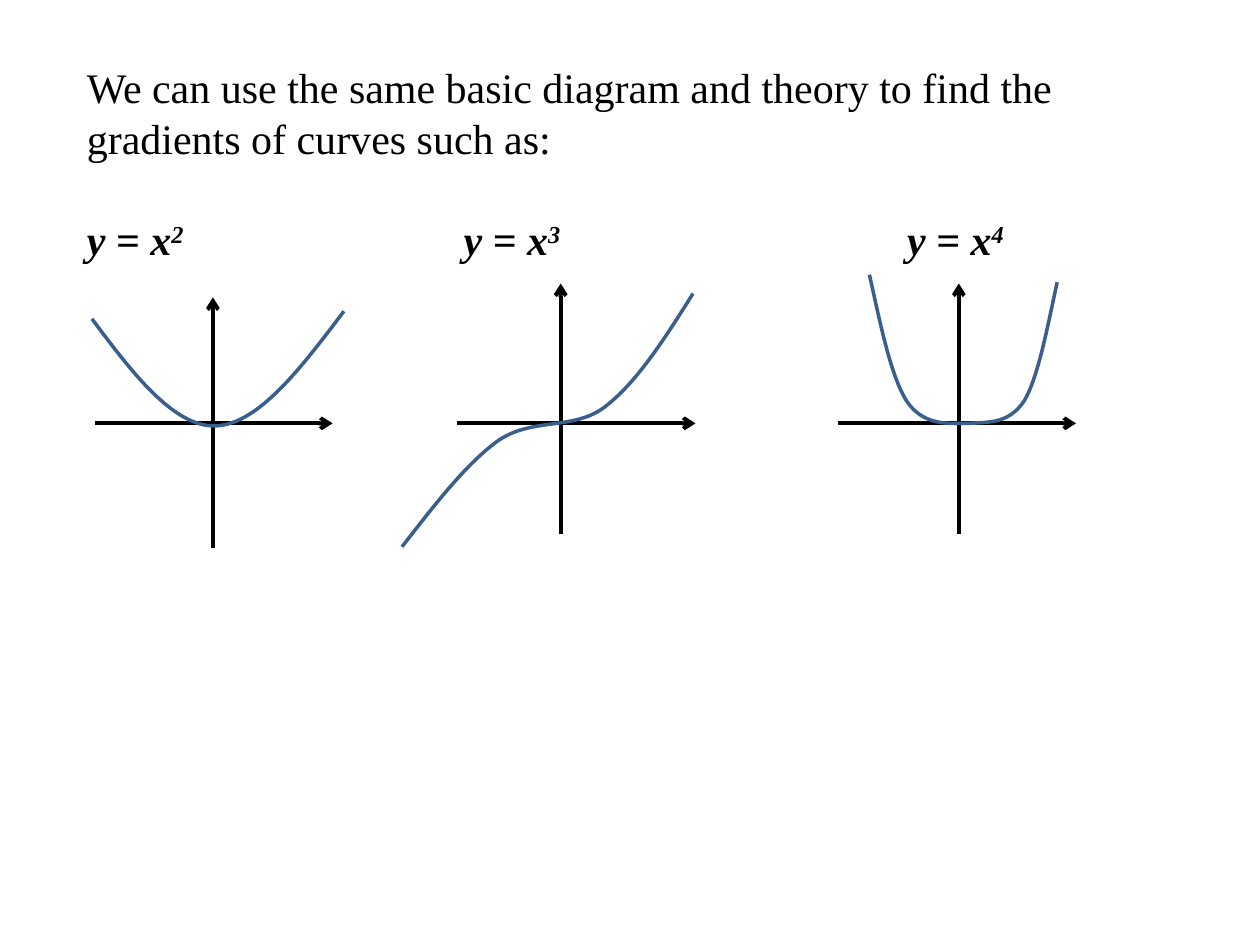
from dataclasses import dataclass

from lxml.etree import SubElement
from pptx import Presentation
from pptx.dml.color import RGBColor
from pptx.enum.shapes import MSO_CONNECTOR
from pptx.oxml.ns import qn
from pptx.util import Inches, Pt

CELL = Inches(10) // 100  # the slide is a grid of 100 columns by 75 rows
AXIS_ROW = 33.6
AXIS_WIDTH, AXIS_HEIGHT = 18.9, 19.9
LINE_HEIGHT = Pt(28.9)


@dataclass
class Graph:
    """A power of x; curve holds Bezier points measured from the origin."""
    power: str
    label_tab: float
    origin: float
    axis_left: float
    axis_bottom: float
    curve: list


GRAPHS = [
    Graph("2", 0, 16.9, 7.5, 43.5,
          [(-9.6, -8.3), (-6.4, -4), (-3.1, 0.3), (0.2, 0.2),
           (3.6, 0.1), (7, -4.4), (10.4, -8.9)]),
    Graph("3", 29.9, 44.5, 36.3, 42.4,
          [(10.5, -10.3), (8.3, -6.8), (6.1, -3.3), (3.5, -1.3),
           (1, 0.6), (-2.3, -0.5), (-5, 1.4),
           (-7.6, 3.3), (-10.1, 6.6), (-12.6, 9.8)]),
    Graph("4", 65.1, 76.1, 66.5, 42.4,
          [(-7.1, -11.8), (-6.2, -7.8), (-5.4, -3.7), (-4.1, -1.7),
           (-2.7, 0.3), (-0.6, 0), (0.9, 0),
           (2.5, -0.1), (4, 0), (5.2, -1.8),
           (6.3, -3.7), (7, -7.5), (7.8, -11.2)]),
]


def cells(count):
    return round(count * CELL)


def color(hex_code):
    return RGBColor.from_string(hex_code)


def style_paragraph(paragraph):
    paragraph.line_spacing = LINE_HEIGHT
    paragraph.font.name = "Times New Roman"
    paragraph.font.size = Pt(24)
    paragraph.font.color.rgb = color("000000")


def add_equations(paragraph):
    """Set the equations on one line, each at its own tab stop."""
    paragraph.space_before = LINE_HEIGHT
    paragraph.font.bold = paragraph.font.italic = True
    tab_stops = SubElement(paragraph._p.get_or_add_pPr(), qn("a:tabLst"))
    # tab stops come before the default run properties
    tab_stops.getnext() or tab_stops.getparent().find(qn("a:defRPr")).addprevious(tab_stops)
    for graph in GRAPHS:
        if graph.label_tab:
            SubElement(tab_stops, qn("a:tab"), pos=str(cells(graph.label_tab)), algn="l")
        paragraph.add_run().text = "\ty = x" if graph.label_tab else "y = x"
        exponent = paragraph.add_run()
        exponent.text = graph.power
        exponent.font._element.set("baseline", "30000")


def add_text(slide):
    box = slide.shapes.add_textbox(*map(cells, (5.9, 4.4, 85.8, 41.4)))
    frame = box.text_frame
    frame.word_wrap = True
    intro, equations = frame.paragraphs[0], frame.add_paragraph()
    intro.text = ("We can use the same basic diagram and theory "
                  "to find the gradients of curves such as:")
    for paragraph in (intro, equations):
        style_paragraph(paragraph)
    add_equations(equations)


def add_axis(slide, start, end):
    axis = slide.shapes.add_connector(MSO_CONNECTOR.STRAIGHT, *map(cells, start + end))
    axis.line.color.rgb = color("000000")
    axis.line.width = Pt(2.25)
    SubElement(axis.line._get_or_add_ln(), qn("a:tailEnd"), type="arrow")
    SubElement(axis._element.spPr, qn("a:effectLst"))


def add_curve(slide, points):
    start, *controls = [(cells(x), cells(y)) for x, y in points]
    builder = slide.shapes.build_freeform(*start)
    builder.add_line_segments(controls, close=False)
    curve = builder.convert_to_shape()
    curve.shadow.inherit = False
    curve.fill.background()
    curve.line.color.rgb = color("3A5F8C")
    curve.line.width = Pt(2)

    # Every three line segments become one cubic Bezier segment.
    path = next(curve._element.iter(qn("a:path")))
    segments = path.findall(qn("a:lnTo"))
    for first in range(0, len(segments), 3):
        bezier = SubElement(path, qn("a:cubicBezTo"))
        for segment in segments[first:first + 3]:
            bezier.append(segment[0])
            path.remove(segment)


def add_graph(slide, graph):
    add_axis(slide, (graph.axis_left, AXIS_ROW),
             (graph.axis_left + AXIS_WIDTH, AXIS_ROW))
    add_axis(slide, (graph.origin, graph.axis_bottom),
             (graph.origin, graph.axis_bottom - AXIS_HEIGHT))
    add_curve(slide, [(graph.origin + x, AXIS_ROW + y) for x, y in graph.curve])


def main():
    presentation = Presentation()
    presentation.slide_width = cells(100)
    presentation.slide_height = cells(75)
    slide = presentation.slides.add_slide(presentation.slide_layouts[6])
    add_text(slide)
    for graph in GRAPHS:
        add_graph(slide, graph)
    presentation.save("out.pptx")


if __name__ == "__main__":
    main()
